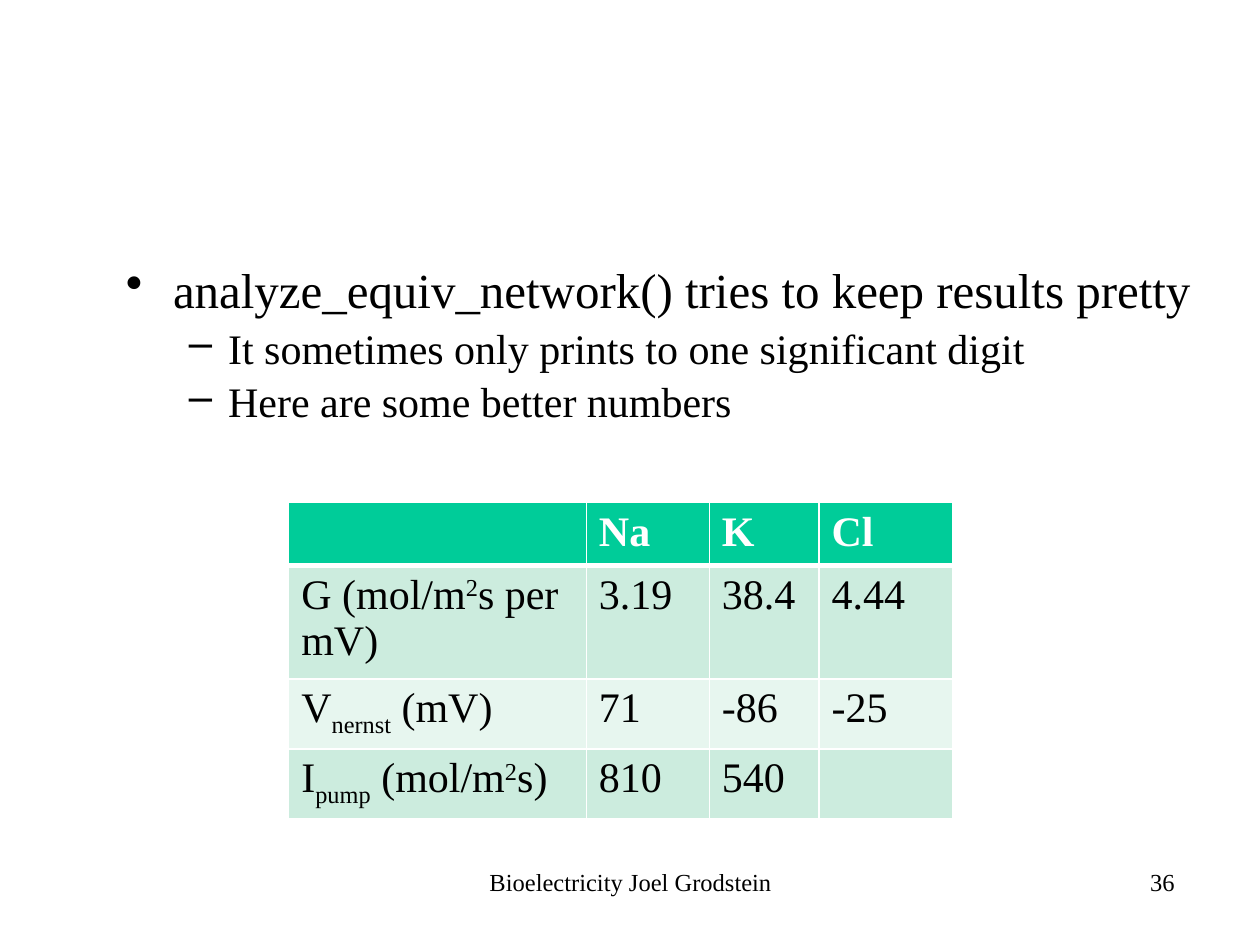
import lxml.etree
import pptx
import pptx.dml.color
import pptx.enum.text
import pptx.oxml.ns
import pptx.util
from dataclasses import dataclass

Cm, Pt = pptx.util.Cm, pptx.util.Pt
Align = pptx.enum.text.PP_ALIGN
qn = pptx.oxml.ns.qn


@dataclass(frozen=True)
class Theme:
    font: str = "Times New Roman"
    ink: str = "000000"
    paper: str = "FFFFFF"
    header: str = "00CC99"
    bands: tuple = ("CCECDE", "E7F6EF")
    main: int = 28
    detail: int = 24
    small: int = 14
    raised: int = 30000
    lowered: int = -25000


THEME = Theme()

# Text level: size, bullet, left indent and hanging indent in cm, space before in points
LEVELS = (
    (THEME.main, "•", 0.95, 0.95, 3),
    (THEME.detail, "–", 2.06, 0.79, 2),
)
BULLETS = (
    (0, "analyze_equiv_network() tries to keep results pretty"),
    (1, "It sometimes only prints to one significant digit"),
    (1, "Here are some better numbers"),
)

# A cell is a list of (text, baseline shift) spans
UP, DOWN = THEME.raised, THEME.lowered
ROWS = (
    ("", "Na", "K", "Cl"),
    ([("G (mol/m", 0), ("2", UP), ("s per mV)", 0)], "3.19", "38.4", "4.44"),
    ([("V", 0), ("nernst", DOWN), (" (mV)", 0)], "71", "-86", "-25"),
    ([("I", 0), ("pump", DOWN), (" (mol/m", 0), ("2", UP), ("s)", 0)], "810", "540", ""),
)
COLUMN_WIDTHS = (6, 2.48, 2.21, 2.69)
ROW_HEIGHTS = (1.17, 2.13, 1.33, 1.31)


def apply_format(target, values):
    for name, value in values.items():
        setattr(target, name, value)


def add_span(para, text, size, color=THEME.ink, bold=False, baseline=0):
    span = para.add_run()
    span.text = text
    apply_format(span.font, {"name": THEME.font, "size": Pt(size), "bold": bold})
    span.font.color.rgb = pptx.dml.color.RGBColor.from_string(color)
    if baseline:
        span.font._element.set("baseline", str(baseline))


def add_text_frame(page, box):
    frame = page.shapes.add_textbox(*map(Cm, box)).text_frame
    frame.word_wrap = True
    return frame


def add_bullets(page, box):
    frame = add_text_frame(page, box)
    frame.margin_right = 0
    for index, (level, text) in enumerate(BULLETS):
        para = frame.add_paragraph() if index else frame.paragraphs[0]
        size, mark, left, hang, before = LEVELS[level]
        apply_format(para, {"level": level, "space_before": Pt(before)})
        properties = para._p.get_or_add_pPr()
        properties.set("marL", str(Cm(left)))
        properties.set("indent", str(-Cm(hang)))
        lxml.etree.SubElement(properties, qn("a:buChar"), char=mark)
        add_span(para, text, size)


def add_borders(cell, bottom):
    properties = cell._tc.get_or_add_tcPr()
    for index, (side, width) in enumerate((("L", 1), ("R", 1), ("T", 1), ("B", bottom))):
        line = lxml.etree.Element(qn(f"a:ln{side}"), w=str(Pt(width)))
        fill = lxml.etree.SubElement(line, qn("a:solidFill"))
        lxml.etree.SubElement(fill, qn("a:srgbClr"), val=THEME.paper)
        properties.insert(index, line)


def add_numbers(page, box):
    table = page.shapes.add_table(len(ROWS), len(ROWS[0]), *map(Cm, box)).table
    for column, width in zip(table.columns, COLUMN_WIDTHS):
        column.width = Cm(width)
    for row, height in zip(table.rows, ROW_HEIGHTS):
        row.height = Cm(height)
    for r, row in enumerate(ROWS):
        is_header = r == 0
        fill = THEME.header if is_header else THEME.bands[(r - 1) % 2]
        for c, content in enumerate(row):
            cell = table.cell(r, c)
            cell.fill.solid()
            cell.fill.fore_color.rgb = pptx.dml.color.RGBColor.from_string(fill)
            add_borders(cell, 3 if is_header else 1)
            spans = [(content, 0)] if isinstance(content, str) else content
            for text, baseline in spans:
                if text:
                    add_span(cell.text_frame.paragraphs[0], text, THEME.detail,
                             THEME.paper if is_header else THEME.ink, is_header, baseline)


def add_footer(page, box, text, alignment):
    para = add_text_frame(page, box).paragraphs[0]
    para.alignment = alignment
    add_span(para, text, THEME.small)


def main():
    deck = pptx.Presentation()
    apply_format(deck, {"slide_width": Cm(25.4), "slide_height": Cm(19.05)})
    page = deck.slides.add_slide(deck.slide_layouts[6])

    # Body text
    add_bullets(page, (2.29, 5.11, 22, 4.39))
    # Table of better numbers
    add_numbers(page, (5.82, 10.13, sum(COLUMN_WIDTHS), sum(ROW_HEIGHTS)))
    # Footer and page number
    add_footer(page, (8.69, 17.35, 8.05, 0.86), "Bioelectricity Joel Grodstein", Align.CENTER)
    add_footer(page, (15.88, 17.35, 8.05, 1.27), "36", Align.RIGHT)

    deck.save("out.pptx")


if __name__ == "__main__":
    main()
